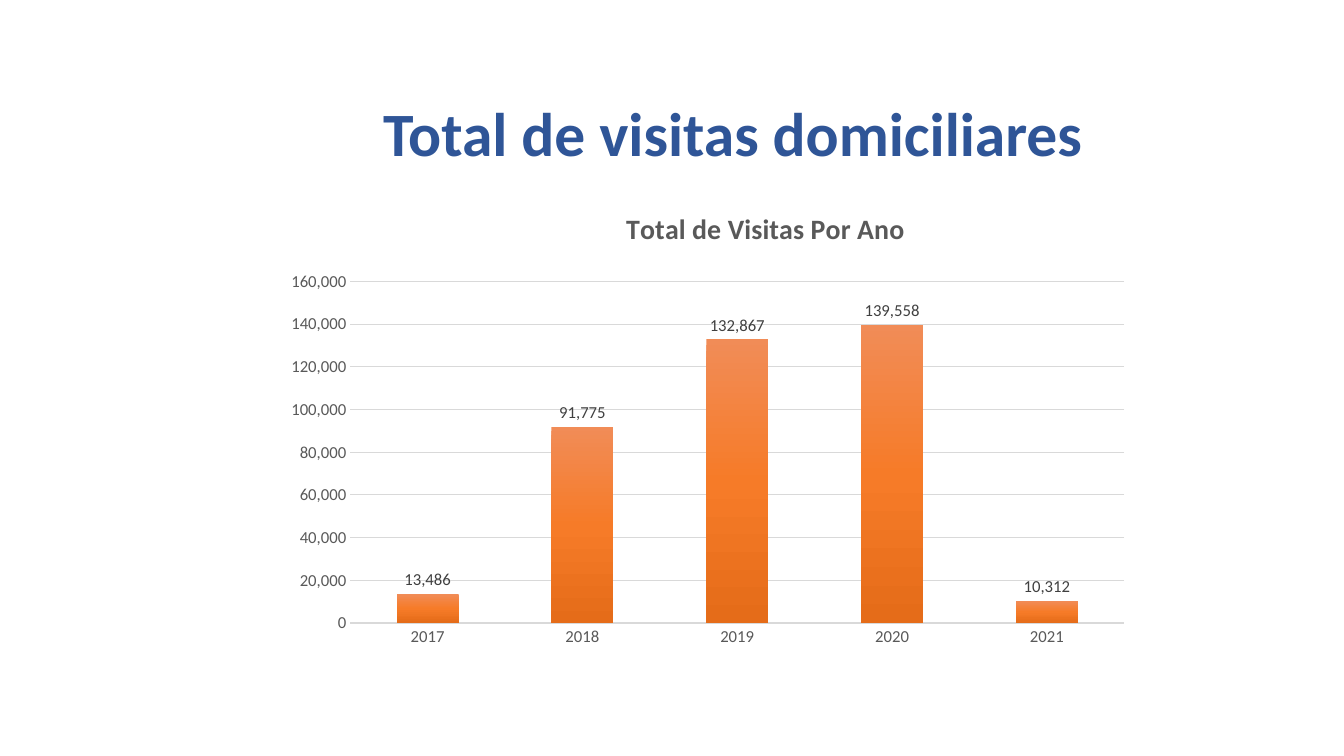
from copy import deepcopy

from lxml.etree import SubElement as Sub
from pptx import Presentation
from pptx.chart.data import CategoryChartData as Data
from pptx.dml.color import RGBColor
from pptx.enum.chart import XL_CHART_TYPE as Kind
from pptx.enum.chart import XL_LABEL_POSITION as Place
from pptx.enum.chart import XL_TICK_MARK as Tick
from pptx.enum.text import MSO_ANCHOR as Anchor
from pptx.enum.text import PP_ALIGN as Align
from pptx.oxml.ns import qn
from pptx.util import Cm, Pt

BLUE = RGBColor(0x2F, 0x55, 0x97)
GREY = RGBColor(0x59, 0x59, 0x59)
DARK = RGBColor(0x40, 0x40, 0x40)
PALE = RGBColor(0xD9, 0xD9, 0xD9)
BLEND = (
    RGBColor(0xF1, 0x8C, 0x57),
    RGBColor(0xF6, 0x7B, 0x28),
    RGBColor(0xE5, 0x6C, 0x19),
)
VISITS = {
    "2017": 13486,
    "2018": 91775,
    "2019": 132867,
    "2020": 139558,
    "2021": 10312,
}


class Deck:
    face = "Calibri"

    def __init__(self):
        self.file = Presentation()
        self.file.slide_width = Cm(33.87)
        self.file.slide_height = Cm(19.05)
        self.slide = self.file.slides.add_slide(self.file.slide_layouts[5])

    def style(self, font, size, color, bold=False):
        font.name = self.face
        font.size = Pt(size)
        font.bold = bold
        font.color.rgb = color

    def title(self, text, left, top, width, height):
        shape = self.slide.shapes.title
        shape.left, shape.top = Cm(left), Cm(top)
        shape.width, shape.height = Cm(width), Cm(height)
        frame = shape.text_frame
        frame.word_wrap = True
        frame.vertical_anchor = Anchor.MIDDLE
        para = frame.paragraphs[0]
        para.alignment = Align.CENTER
        para.line_spacing = 0.9
        run = para.add_run()
        run.text = text
        self.style(run.font, 44, BLUE, True)

    def chart(self, name, values, left, top, width, height):
        data = Data(number_format="#,##0")
        data.categories = list(values)
        data.add_series("Series 1", list(values.values()))
        chart = self.slide.shapes.add_chart(
            Kind.COLUMN_CLUSTERED,
            Cm(left), Cm(top), Cm(width), Cm(height), data,
        ).chart
        self.style(chart.font, 12, GREY)
        chart.has_legend = False
        self.head(chart, name)
        self.axes(chart)
        self.bars(chart.plots[0])
        area = chart.plots[0]._element.getparent()
        self.layout(area, x=0.062, y=0.208, w=0.88, h=0.69)

    def head(self, chart, name):
        chart.has_title = True
        title = chart.chart_title
        run = title.text_frame.paragraphs[0].add_run()
        run.text = name
        self.style(run.font, 20, GREY, True)
        title.include_in_layout = False
        self.layout(title._element, x=0.37, y=0.05)

    def axes(self, chart):
        years, scale = chart.category_axis, chart.value_axis
        for axis in (years, scale):
            axis.major_tick_mark = axis.minor_tick_mark = Tick.NONE
            self.style(axis.tick_labels.font, 12, GREY)
        years.format.line.color.rgb = PALE
        years.format.line.width = Pt(1)
        scale.format.line.fill.background()
        scale.minimum_scale, scale.maximum_scale = 0, 160000
        scale.major_unit = 20000
        scale.tick_labels.number_format = "#,##0"
        scale.tick_labels.number_format_is_linked = False
        grid = scale.major_gridlines.format.line
        grid.color.rgb = PALE
        grid.width = Pt(0.75)

    def bars(self, plot):
        plot.gap_width = 150
        plot.vary_by_categories = False
        series = plot.series[0]
        fill = series.format.fill
        fill.gradient()
        fill.gradient_angle = 270
        first = series._element.find(".//" + qn("a:gs"))
        first.addnext(deepcopy(first))
        for i, (stop, color) in enumerate(zip(fill.gradient_stops, BLEND)):
            stop.color.rgb = color
            stop.position = i / 2
        labels = series.data_labels
        labels.show_value = True
        labels.position = Place.OUTSIDE_END
        labels.number_format = "#,##0"
        labels.number_format_is_linked = False
        self.style(labels.font, 12, DARK)

    def layout(self, part, **box):
        """Place a chart part by fractions of the chart's size."""
        node = part.find(qn("c:layout"))
        if node is None:
            node = Sub(part, qn("c:layout"))
            text = part.find(qn("c:tx"))
            if text is None:
                part.insert(0, node)
            else:
                text.addnext(node)
        for child in list(node):
            node.remove(child)
        spot = Sub(node, qn("c:manualLayout"))
        if "w" in box:
            Sub(spot, qn("c:layoutTarget")).set("val", "inner")
        for key in "xy":
            Sub(spot, qn(f"c:{key}Mode")).set("val", "edge")
        for key, value in box.items():
            Sub(spot, qn(f"c:{key}")).set("val", str(value))


def main():
    deck = Deck()
    deck.title("Total de visitas domiciliares ", 5.79, 1.02, 25.73, 4.83)
    deck.chart("Total de Visitas Por Ano", VISITS, 7.34, 4.5, 22.28, 12.47)
    deck.file.save("out.pptx")


if __name__ == "__main__":
    main()
